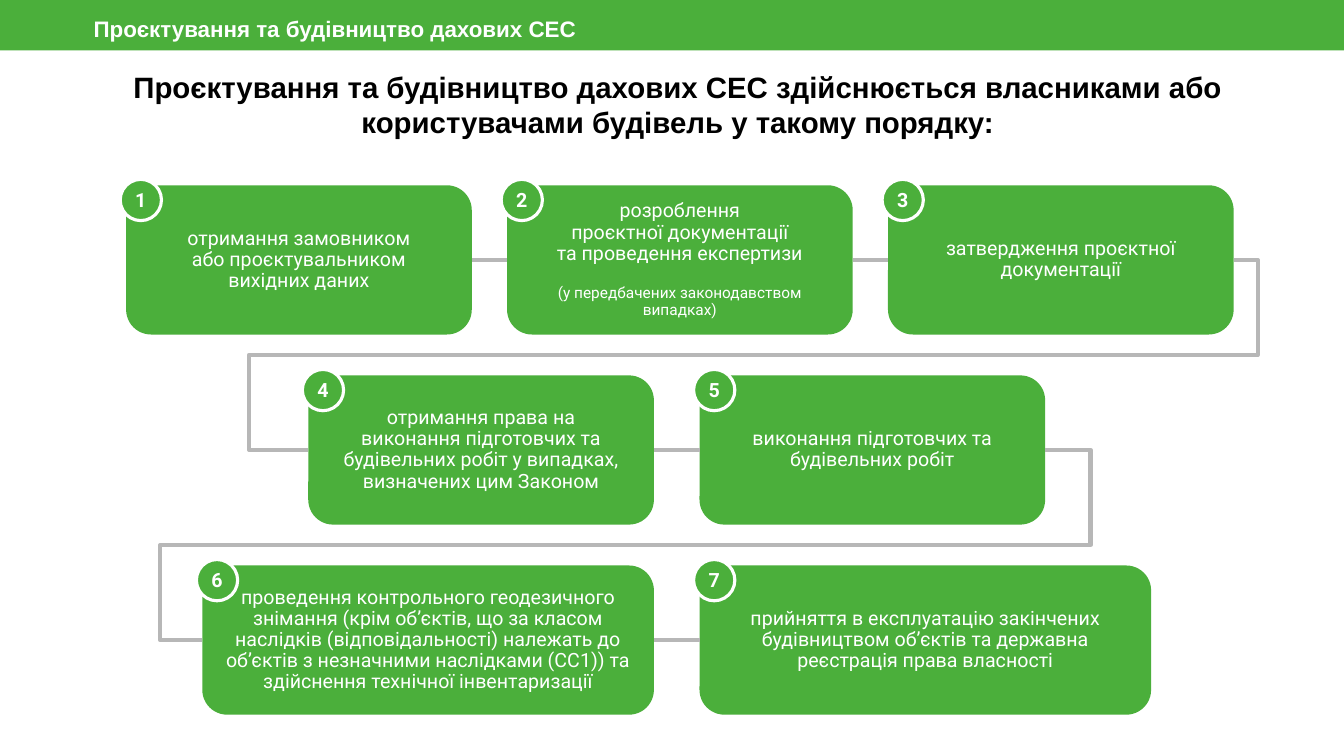
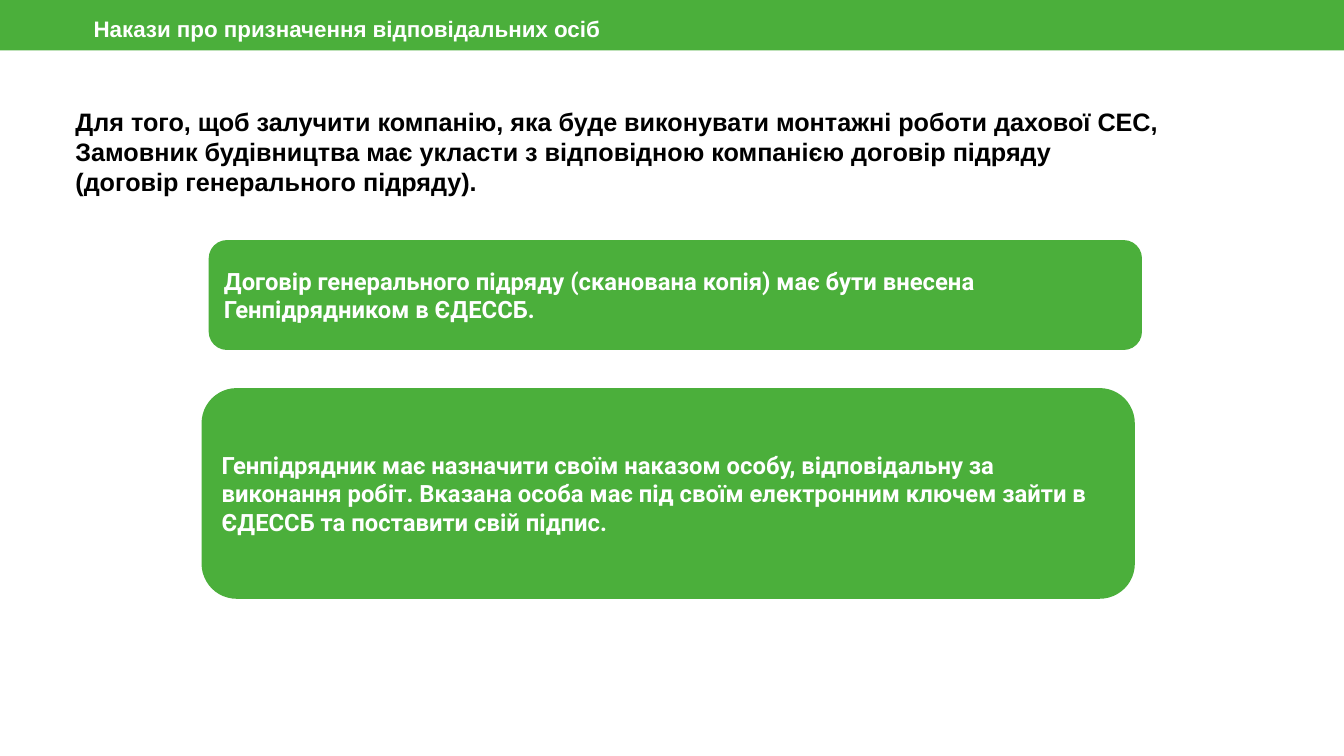
import copy

import pptx
import pptx.dml.color
import pptx.enum.shapes
import pptx.enum.text
import pptx.oxml
import pptx.oxml.ns
import pptx.util
from lxml import etree

Cm = pptx.util.Cm
Pt = pptx.util.Pt
RGBColor = pptx.dml.color.RGBColor
SHAPE = pptx.enum.shapes.MSO_SHAPE
CONNECTOR = pptx.enum.shapes.MSO_CONNECTOR
ALIGN = pptx.enum.text.PP_ALIGN
ANCHOR = pptx.enum.text.MSO_ANCHOR
qn = pptx.oxml.ns.qn

GREEN = RGBColor(0x4B, 0xAF, 0x3B)
GREY = RGBColor(0xB7, 0xB7, 0xB7)
WHITE = RGBColor(0xFF, 0xFF, 0xFF)
BLACK = RGBColor(0x00, 0x00, 0x00)
HEAD_FONT = "Arial"
BODY_FONT = "Roboto"

SLIDE_W, SLIDE_H = 33.87, 19.05
STEP_H = 3.76
STEP_TOP, ROW_PITCH = 4.67, 4.79
BADGE_D, BADGE_SHIFT = 1.04, -0.15
RIGHT, LEFT = 3, 1  # connection sites of a rounded rectangle

# Each row: left edge, box width, gap, and the paragraphs of each step
STEP_ROWS = [
    (3.18, 8.71, 0.89, [
        ["отримання замовником\nабо проєктувальником\nвихідних даних"],
        ["розроблення\nпроєктної документації\nта проведення експертизи",
         "(у передбачених законодавством випадках)"],
        ["затвердження проєктної документації"],
    ]),
    (7.77, 8.71, 1.15, [
        ["отримання права на\nвиконання підготовчих та будівельних робіт у випадках, "
         "визначених цим Законом"],
        ["виконання підготовчих та будівельних робіт"],
    ]),
    (5.1, 11.38, 1.15, [
        ["проведення контрольного геодезичного знімання (крім об’єктів, що за класом "
         "наслідків (відповідальності) належать до об’єктів з незначними наслідками "
         "(СС1)) та здійснення технічної інвентаризації"],
        ["прийняття в експлуатацію закінчених будівництвом об’єктів та державна "
         "реєстрація права власності"],
    ]),
]
# Overhang of the link between rows: right of its start, left of its end
ROW_LINKS = [(0.61, 1.5), (1.14, 1.07)]


def write(tf, text, *, size, color=WHITE, font=BODY_FONT, bold=False,
          align=ALIGN.LEFT, spacing=1.0, before=0):
    """Fill the first empty paragraph of tf, or add one."""
    p = tf.paragraphs[0] if not tf.text else tf.add_paragraph()
    p.text = text
    p.alignment = align
    p.line_spacing = spacing
    p.space_before = Pt(before)
    for r in p.runs:
        r.font.size = Pt(size)
        r.font.name = font
        r.font.bold = bold
        r.font.color.rgb = color
    # Line breaks take the height of the text around them
    for br in p._p.findall(qn("a:br")):
        br.append(copy.deepcopy(p.runs[0]._r.rPr))


def set_frame(tf, inset=0.25, anchor=ANCHOR.MIDDLE):
    tf.word_wrap = True
    tf.auto_size = pptx.enum.text.MSO_AUTO_SIZE.NONE
    tf.vertical_anchor = anchor
    tf.margin_left = tf.margin_right = Cm(0.25)
    tf.margin_top = tf.margin_bottom = Cm(inset)


def add_block(slide, kind, left, top, width, height, line=None):
    sp = slide.shapes.add_shape(kind, Cm(left), Cm(top), Cm(width), Cm(height))
    sp.shadow.inherit = False
    sp.fill.solid()
    sp.fill.fore_color.rgb = GREEN
    if line is None:
        sp.line.fill.background()
    else:
        sp.line.color.rgb = line
        sp.line.width = Pt(2.25)
    set_frame(sp.text_frame)
    return sp


def add_link(slide, start, end, overhang=None):
    """Join the right side of start to the left side of end."""
    kind = CONNECTOR.ELBOW if overhang else CONNECTOR.STRAIGHT
    cn = slide.shapes.add_connector(kind, 0, 0, 0, 0)
    cn.begin_connect(start, RIGHT)
    cn.end_connect(end, LEFT)
    cn.line.color.rgb = GREY
    cn.line.width = Pt(3)
    sp_pr = cn._element.spPr
    etree.SubElement(sp_pr, qn("a:effectLst"))
    if overhang:
        right, left = (Cm(length) / cn.width for length in overhang)
        geom = sp_pr.find(qn("a:prstGeom"))
        geom.set("prst", "bentConnector5")
        guides = geom.find(qn("a:avLst"))
        for n, share in enumerate((-right, 0.5, 1 + left), 1):
            etree.SubElement(guides, qn("a:gd"), name=f"adj{n}",
                             fmla=f"val {round(share * 100000)}")


def add_step(slide, number, paragraphs, left, top, width):
    sp = add_block(slide, SHAPE.ROUNDED_RECTANGLE, left, top, width, STEP_H)
    text, *notes = paragraphs
    write(sp.text_frame, text, size=14, align=ALIGN.CENTER, spacing=0.9)
    for note in notes:
        write(sp.text_frame, note, size=11, align=ALIGN.CENTER, spacing=0.9, before=15)
    badge = add_block(slide, SHAPE.OVAL, left + BADGE_SHIFT, top + BADGE_SHIFT,
                      BADGE_D, BADGE_D, line=WHITE)
    badge.text_frame.word_wrap = False
    write(badge.text_frame, str(number), size=14, bold=True, align=ALIGN.CENTER)
    return sp


def add_band(slide, text):
    add_block(slide, SHAPE.RECTANGLE, 0, 0, SLIDE_W, 1.27)
    sp = slide.shapes.add_textbox(Cm(2.11), Cm(0.15), Cm(27.43), Cm(1.3))
    set_frame(sp.text_frame, anchor=ANCHOR.TOP)
    write(sp.text_frame, text, size=16, font=HEAD_FONT, bold=True, spacing=0.99)


def add_slide(prs, section, title, box, size, align):
    """Start a slide with its band and title."""
    slide = prs.slides.add_slide(prs.slide_layouts[5])
    add_band(slide, section)
    sp = slide.shapes.title
    sp.left, sp.top, sp.width, sp.height = (Cm(length) for length in box)
    set_frame(sp.text_frame, inset=0.13)
    write(sp.text_frame, title, size=size, color=BLACK, font=HEAD_FONT, bold=True,
          align=align, spacing=0.99)
    return slide


def build_process(prs):
    slide = add_slide(
        prs, "Проєктування та будівництво дахових СЕС",
        "Проєктування та будівництво дахових СЕС здійснюється власниками або "
        "користувачами будівель у такому порядку:",
        (1.88, 1.88, 30.4, 1.57), 21, ALIGN.CENTER)
    # Steps, row by row
    rows, number = [], 0
    for i, (left, width, gap, steps) in enumerate(STEP_ROWS):
        row = []
        for j, paragraphs in enumerate(steps):
            number += 1
            row.append(add_step(slide, number, paragraphs, left + j * (width + gap),
                                STEP_TOP + i * ROW_PITCH, width))
        rows.append(row)
    # Links within rows, then between rows
    for row in rows:
        for start, end in zip(row, row[1:]):
            add_link(slide, start, end)
    for upper, lower, overhang in zip(rows, rows[1:], ROW_LINKS):
        add_link(slide, upper[-1], lower[0], overhang)


def build_orders(prs):
    slide = add_slide(
        prs, "Накази про призначення відповідальних осіб",
        "Для того, щоб залучити компанію, яка буде виконувати монтажні роботи "
        "дахової СЕС,\nЗамовник будівництва має укласти з відповідною компанією "
        "договір підряду\n(договір генерального підряду).",
        (1.65, 3.02, 31.09, 1.65), 18, ALIGN.LEFT)
    # Requirements
    for left, top, height, text in (
        (5.26, 6.05, 2.77,
         "Договір генерального підряду (сканована копія) має бути внесена "
         "Генпідрядником в ЄДЕССБ."),
        (5.08, 9.78, 5.31,
         "Генпідрядник має назначити своїм наказом особу, відповідальну за "
         "виконання робіт. Вказана особа має під своїм електронним ключем зайти в "
         "ЄДЕССБ та поставити свій підпис."),
    ):
        sp = add_block(slide, SHAPE.ROUNDED_RECTANGLE, left, top, 23.52, height)
        write(sp.text_frame, text, size=17, bold=True)


def main():
    prs = pptx.Presentation()
    prs.slide_width, prs.slide_height = Cm(SLIDE_W), Cm(SLIDE_H)
    build_process(prs)
    build_orders(prs)
    prs.save("out.pptx")


if __name__ == "__main__":
    main()
